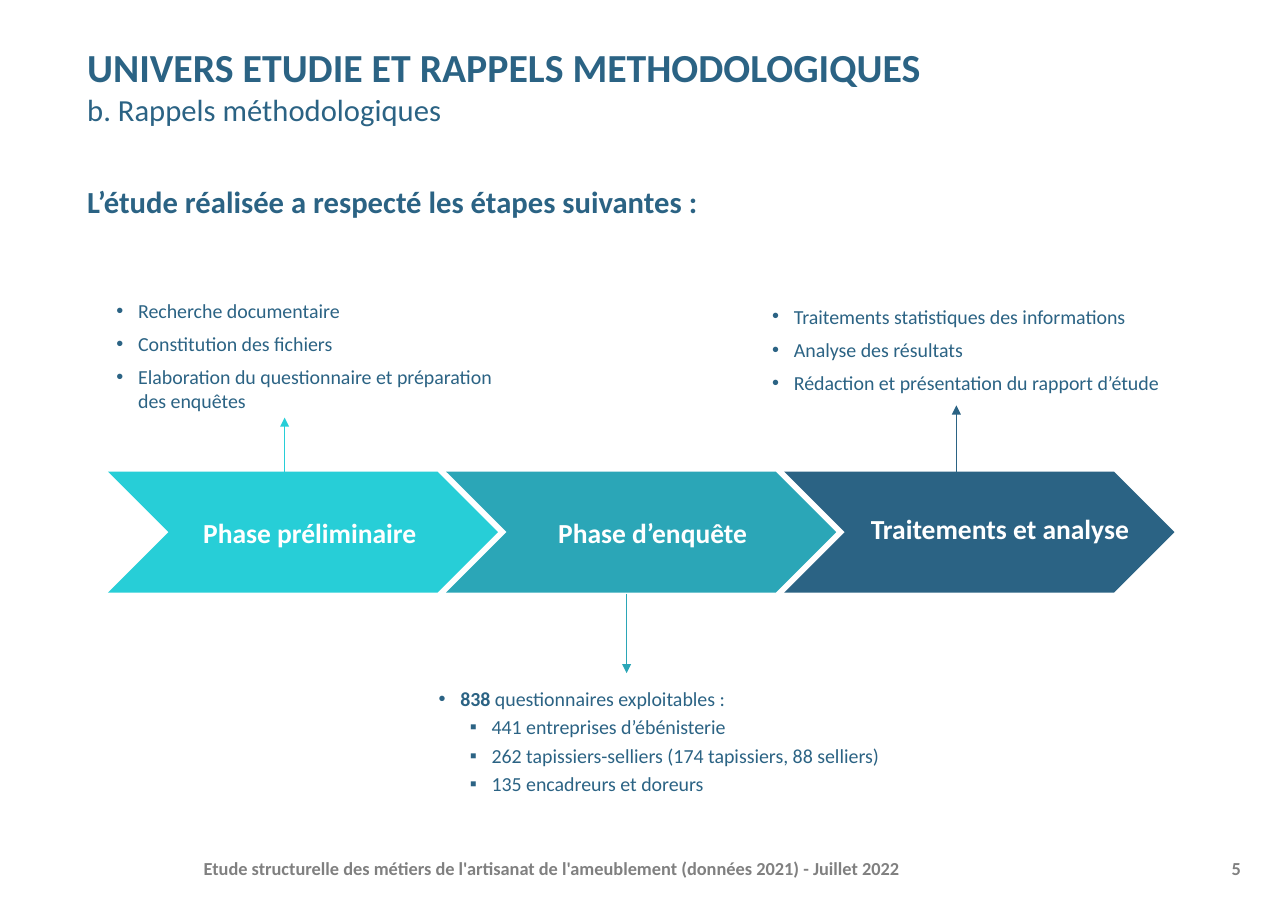
from lxml import etree
from pptx import Presentation
from pptx import util as u
from pptx.dml.color import RGBColor
from pptx.enum import shapes, text
from pptx.oxml.ns import qn

COLORS = {"navy": "2B6384", "teal": "2BA6B7", "aqua": "27CED7",
          "gray": "808080", "white": "FFFFFF"}
ALIGN, ANCHOR = text.PP_ALIGN, text.MSO_ANCHOR


class Deck:
    """Hold the style and current slide, and draw each kind of element."""

    font = "Calibri"

    def __init__(self, width, height):
        self.prs = Presentation()
        self.prs.slide_width, self.prs.slide_height = u.Pt(width), u.Pt(height)
        self.s = self.prs.slides.add_slide(self.prs.slide_layouts[5])

    def color(self, name):
        return RGBColor.from_string(COLORS[name])

    def frame(self, sp, inset=(7.2, 3.6), anchor=ANCHOR.TOP):
        x, y = map(u.Pt, inset)
        tf = sp.text_frame
        style = {"word_wrap": True, "auto_size": text.MSO_AUTO_SIZE.NONE,
                 "vertical_anchor": anchor, "margin_left": x, "margin_right": x,
                 "margin_top": y, "margin_bottom": y}
        for key, value in style.items():
            setattr(tf, key, value)
        return tf

    def run(self, p, words, size, color="navy", bold=False):
        r = p.add_run()
        r.text = words
        for key, value in {"name": self.font, "size": u.Pt(size), "bold": bold}.items():
            setattr(r.font, key, value)
        r.font.color.rgb = self.color(color)

    def title(self, box, heading, subtitle):
        sp = self.s.shapes.title
        for key, value in zip(("left", "top", "width", "height"), box):
            setattr(sp, key, u.Pt(value))
        p = self.frame(sp, (0, 0)).paragraphs[0]
        p.alignment = ALIGN.LEFT
        self.run(p, heading, 26, bold=True)
        p.add_line_break()
        self.run(p, subtitle, 20)

    def label(self, box, words, size, color, align=ALIGN.LEFT, **frame):
        sp = self.s.shapes.add_textbox(*map(u.Pt, box))
        p = self.frame(sp, **frame).paragraphs[0]
        p.alignment = align
        self.run(p, words, size, color, True)

    def bullets(self, box, items):
        tf = self.frame(self.s.shapes.add_textbox(*map(u.Pt, box)))
        for i, (level, runs) in enumerate(items):
            p = tf.add_paragraph() if i else tf.paragraphs[0]
            pPr = p._p.get_or_add_pPr()
            pPr.set("marL", str(u.Pt((14.2, 34.6)[level])))
            pPr.set("indent", str(u.Pt(-14.2)))
            etree.SubElement(pPr, qn("a:buFont")).set("typeface", "Arial")
            etree.SubElement(pPr, qn("a:buChar")).set("char", "•▪"[level])
            p.level = level
            p.space_before = u.Pt((6, 3)[level] if i else 0)
            for words, bold in runs:
                self.run(p, words, 13, bold=bold)

    def chevron(self, box, color):
        sp = self.s.shapes.add_shape(shapes.MSO_SHAPE.CHEVRON, *map(u.Pt, box))
        sp.shadow.inherit = False
        sp.fill.solid()
        sp.fill.fore_color.rgb = self.color(color)
        sp.line.fill.background()

    def arrow(self, x, start, end, color):
        sp = self.s.shapes.add_connector(
            shapes.MSO_CONNECTOR.STRAIGHT, *map(u.Pt, (x, start, x, end)))
        sp.line.width = u.Pt(0.75)
        sp.line.color.rgb = self.color(color)
        etree.SubElement(sp.line._get_or_add_ln(), qn("a:tailEnd")).set("type", "triangle")
        etree.SubElement(sp._element.spPr, qn("a:effectLst"))


def plain(*lines):
    return [(0, [(line, False)]) for line in lines]


def main():
    deck = Deck(841.68, 595.44)
    deck.title((57, 28, 729, 57), "UNIVERS ETUDIE ET RAPPELS METHODOLOGIQUES",
               "b. Rappels méthodologiques")
    deck.label((57, 116, 729, 40), "L’étude réalisée a respecté les étapes suivantes :",
               20, "navy", inset=(0, 3.6))

    phases = [("Phase préliminaire", "aqua", (108, 333.5, 189, 29)),
              ("Phase d’enquête", "teal", (356.5, 333.5, 140, 29)),
              ("Traitements et analyse", "navy", (558, 331, 191, 29))]
    for i, (name, color, box) in enumerate(phases):
        deck.chevron((70.5 + 221 * i, 308.2, 255, 79.2), color)
        deck.label(box, name, 18, "white", ALIGN.CENTER)

    deck.bullets((69, 191.5, 278, 82), plain(
        "Recherche documentaire", "Constitution des fichiers",
        "Elaboration du questionnaire et préparation des enquêtes"))
    deck.bullets((497.5, 195.3, 278, 67), plain(
        "Traitements statistiques des informations", "Analyse des résultats",
        "Rédaction et présentation du rapport d’étude"))
    deck.bullets((279.5, 445, 317.5, 79), [
        (0, [("838 ", True), ("questionnaires exploitables :", False)]),
        (1, [("441 entreprises d’ébénisterie", False)]),
        (1, [("262 tapissiers-selliers (174 tapissiers, 88 selliers)", False)]),
        (1, [("135 encadreurs et doreurs", False)])])

    deck.arrow(409.5, 388, 440, "teal")
    deck.arrow(186, 315, 273, "aqua")
    deck.arrow(625, 315, 265, "navy")

    deck.label((126, 551.5, 635, 32),
               "Etude structurelle des métiers de l'artisanat de l'ameublement "
               "(données 2021) - Juillet 2022", 12, "gray", anchor=ANCHOR.MIDDLE)
    deck.label((762, 551.5, 56, 32), "5", 12, "gray", ALIGN.RIGHT, anchor=ANCHOR.MIDDLE)
    deck.prs.save("out.pptx")


if __name__ == "__main__":
    main()
